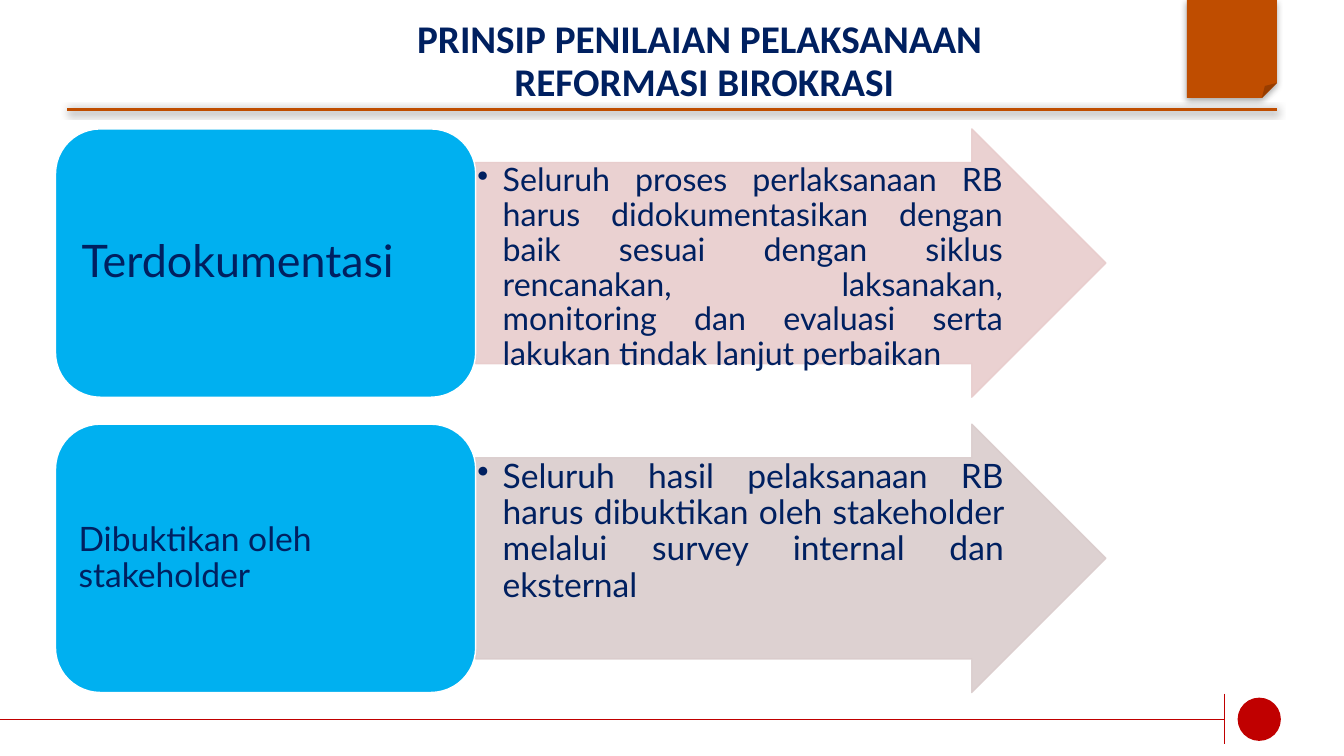
import pptx
import pptx.util
import pptx.dml.color
import pptx.enum.shapes
import pptx.enum.text
import pptx.oxml.ns
import lxml.etree

Cm = pptx.util.Cm
Pt = pptx.util.Pt
KIND = pptx.enum.shapes.MSO_SHAPE
ALIGN = pptx.enum.text.PP_ALIGN
ANCHOR = pptx.enum.text.MSO_ANCHOR

NAVY, RUST, RED, SKY = "002060", "BF4D00", "C00000", "00B0F0"
BANDS = [
    ("Terdokumentasi", 32, 0.33, 0.18,
     "Seluruh proses perlaksanaan RB harus didokumentasikan dengan baik sesuai "
     "dengan siklus rencanakan, laksanakan, monitoring dan evaluasi serta "
     "lakukan tindak lanjut perbaikan", 23, "E8CCCC"),
    ("Dibuktikan oleh stakeholder", 24, 0.25, 0.13,
     "Seluruh hasil pelaksanaan RB harus dibuktikan oleh stakeholder melalui "
     "survey internal dan eksternal", 24, "DACCCC"),
]


def color(code):
    return pptx.dml.color.RGBColor.from_string(code)


def node(parent, tag, **attrs):
    return lxml.etree.SubElement(parent, pptx.oxml.ns.qn(tag), attrs)


def effect(part, shade=None):
    """Set the shadow: none, or (alpha %, blur pt, distance pt) downwards."""
    box = node(part._element.spPr, "a:effectLst")
    if shade:
        alpha, blur, dist = shade
        cast = node(box, "a:outerShdw", blurRad=str(Pt(blur)),
                    dist=str(Pt(dist)), dir="5400000", rotWithShape="0")
        tint = node(cast, "a:srgbClr", val="000000")
        node(tint, "a:alpha", val=str(alpha * 1000))


def shape(slide, kind, box, fill, line=None, adj=(), alpha=None, shade=None):
    part = slide.shapes.add_shape(kind, *map(Cm, box))
    for i, value in enumerate(adj):
        part.adjustments[i] = value
    part.fill.solid()
    part.fill.fore_color.rgb = color(fill)
    if line:
        part.line.color.rgb = color(line)
        part.line.width = Pt(1)
    else:
        part.line.fill.background()
    if alpha:
        for tint in list(part._element.spPr.iter(pptx.oxml.ns.qn("a:srgbClr"))):
            node(tint, "a:alpha", val=str(alpha * 1000))
    effect(part, shade)


def rule(slide, ends, code, width, shade=None):
    line = slide.shapes.add_connector(
        pptx.enum.shapes.MSO_CONNECTOR.STRAIGHT, *map(Cm, ends))
    line.line.color.rgb = color(code)
    line.line.width = Pt(width)
    effect(line, shade)


def text(slide, box, words, size, font="Lato", bold=False, align=ALIGN.LEFT,
         anchor=ANCHOR.TOP, pad=(0.25, 0.13), bullet=False):
    frame = slide.shapes.add_textbox(*map(Cm, box)).text_frame
    frame.word_wrap = True
    frame.vertical_anchor = anchor
    frame.margin_left = frame.margin_right = Cm(pad[0])
    frame.margin_top = frame.margin_bottom = Cm(pad[1])
    para = frame.paragraphs[0]
    para.text = words
    para.alignment = align
    para.line_spacing = 0.9
    for run in para.runs:
        run.font.name = font
        run.font.size = Pt(size)
        run.font.bold = bold
        run.font.color.rgb = color(NAVY)
    if bullet:
        para.level = 1
        props = para._p.get_or_add_pPr()
        props.set("marL", str(Cm(0.64)))
        props.set("indent", str(-Cm(0.64)))
        node(props, "a:buChar", char="•")


def header(slide, x, y, w, h):
    # Folded tab and line
    shape(slide, KIND.FOLDED_CORNER, (x + w - 2.27, y, 2.27, 2.47), RUST,
          shade=(35, 5, 1.8))
    rule(slide, (x, y + h, x + w, y + h), RUST, 2, shade=(38, 5, 1.6))
    # Title
    text(slide, (x + 4.45, y - 0.89, 23.19, 3.66),
         "PRINSIP PENILAIAN PELAKSANAAN \nREFORMASI BIROKRASI", 28,
         font="Calibri", bold=True, align=ALIGN.CENTER, anchor=ANCHOR.BOTTOM)


def band(slide, x, y, w, h, label, size, side, edge, body, small, tint):
    # Arrow with its bullet
    wide = 0.4 * w
    mid = x + wide
    shape(slide, KIND.RIGHT_ARROW, (mid, y, w - wide, h), tint, line=tint,
          adj=[0.75, 0.5], alpha=90)
    text(slide, (mid, y + h / 8, w - wide - 0.375 * h, 0.75 * h), body, small,
         align=ALIGN.JUSTIFY, pad=(0.04, 0.04), bullet=True)
    # Card with its label
    shape(slide, KIND.ROUNDED_RECTANGLE, (x, y, wide, h), SKY, line="FFFFFF")
    gap = 0.33
    text(slide, (x + gap, y + gap, wide - 2 * gap, h - 2 * gap), label, size,
         anchor=ANCHOR.MIDDLE, pad=(side, edge))


def footer(slide, x, y, w, h):
    right = x + w
    shape(slide, KIND.OVAL, (right + 0.33, y + 0.1, 1.09, 1.09), RED)
    rule(slide, (right, y, right, y + h), RED, 0.5)
    rule(slide, (x, y + h / 2, right, y + h / 2), RED, 0.5)


def main():
    deck = pptx.Presentation()
    deck.slide_width, deck.slide_height = Cm(33.87), Cm(19.05)
    slide = deck.slides.add_slide(deck.slide_layouts[6])
    footer(slide, 0, 17.48, 30.86, 1.27)
    header(slide, 1.7, 0, 30.48, 2.75)
    for i, row in enumerate(BANDS):
        band(slide, 1.4, 3.25 + 7.44 * i, 26.47, 6.76, *row)
    deck.save("out.pptx")


if __name__ == "__main__":
    main()
